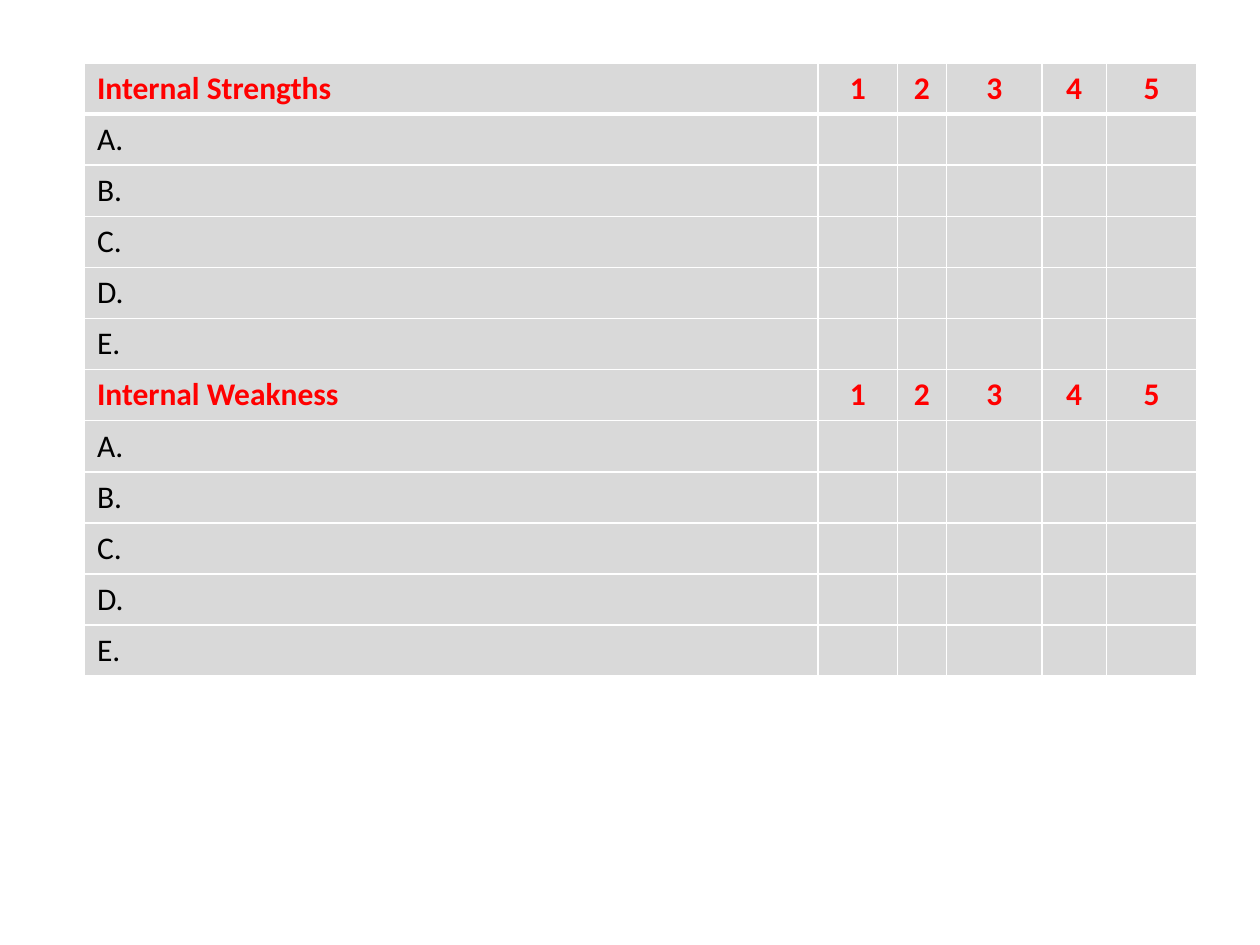
from dataclasses import dataclass

from lxml import etree
from pptx import Presentation
from pptx.dml.color import RGBColor
from pptx.enum.text import MSO_ANCHOR, PP_ALIGN
from pptx.oxml.ns import qn
from pptx.util import Inches, Pt

MIDDLE = MSO_ANCHOR.MIDDLE
LEFT, CENTER = PP_ALIGN.LEFT, PP_ALIGN.CENTER


@dataclass(frozen=True)
class Theme:
    font: str = "Calibri"
    size: int = 18
    heading: str = "FF0000"
    text: str = "000000"
    fill: str = "D9D9D9"
    border: str = "FFFFFF"
    thin: int = 1
    thick: int = 3


THEME = Theme()
SECTIONS = ["Internal Strengths", "Internal Weakness"]
ITEMS = ["A.", "B.", "C.", "D.", "E."]
SCORES = ["1", "2", "3", "4", "5"]
COLUMN_WIDTHS = [5.83, 0.63, 0.39, 0.76, 0.51, 0.72]


def set_borders(cell, top, bottom):
    """Draw all four sides; the side lines are always thin."""
    properties = cell._tc.get_or_add_tcPr()
    widths = {"lnL": THEME.thin, "lnR": THEME.thin, "lnT": top, "lnB": bottom}
    for side, width in widths.items():
        line = etree.SubElement(properties, qn(f"a:{side}"), w=str(Pt(width)))
        solid = etree.SubElement(line, qn("a:solidFill"))
        etree.SubElement(solid, qn("a:srgbClr"), val=THEME.border)


def style_cell(cell, text, is_heading, align):
    cell.fill.solid()
    cell.fill.fore_color.rgb = RGBColor.from_string(THEME.fill)
    cell.vertical_anchor = MIDDLE
    cell.text = text
    para = cell.text_frame.paragraphs[0]
    para.alignment = align
    para.font.name = THEME.font
    para.font.size = Pt(THEME.size)
    para.font.bold = is_heading
    color = THEME.heading if is_heading else THEME.text
    para.font.color.rgb = RGBColor.from_string(color)


def add_rating_table(page, left, top, width, height):
    # Each section is a heading row with scores, then its lettered items
    rows = []
    for section in SECTIONS:
        rows.append([section] + SCORES)
        rows += [[item] + [""] * len(SCORES) for item in ITEMS]

    table = page.shapes.add_table(
        len(rows), len(COLUMN_WIDTHS),
        Inches(left), Inches(top), Inches(width), Inches(height),
    ).table
    table.horz_banding = False

    # Column widths are shares of the box
    for column, share in zip(table.columns, COLUMN_WIDTHS):
        column.width = Inches(width * share / sum(COLUMN_WIDTHS))

    # A thick rule separates the first row from the rest
    for r, values in enumerate(rows):
        above = THEME.thick if r == 1 else THEME.thin
        below = THEME.thick if r == 0 else THEME.thin
        for c, value in enumerate(values):
            cell = table.cell(r, c)
            set_borders(cell, above, below)
            style_cell(cell, value, values[0] in SECTIONS,
                       CENTER if c else LEFT)


def main():
    deck = Presentation()
    deck.slide_width, deck.slide_height = Inches(10), Inches(7.5)
    page = deck.slides.add_slide(deck.slide_layouts[6])
    add_rating_table(page, 0.67, 0.5, 8.83, 4.87)
    deck.save("out.pptx")


if __name__ == "__main__":
    main()
